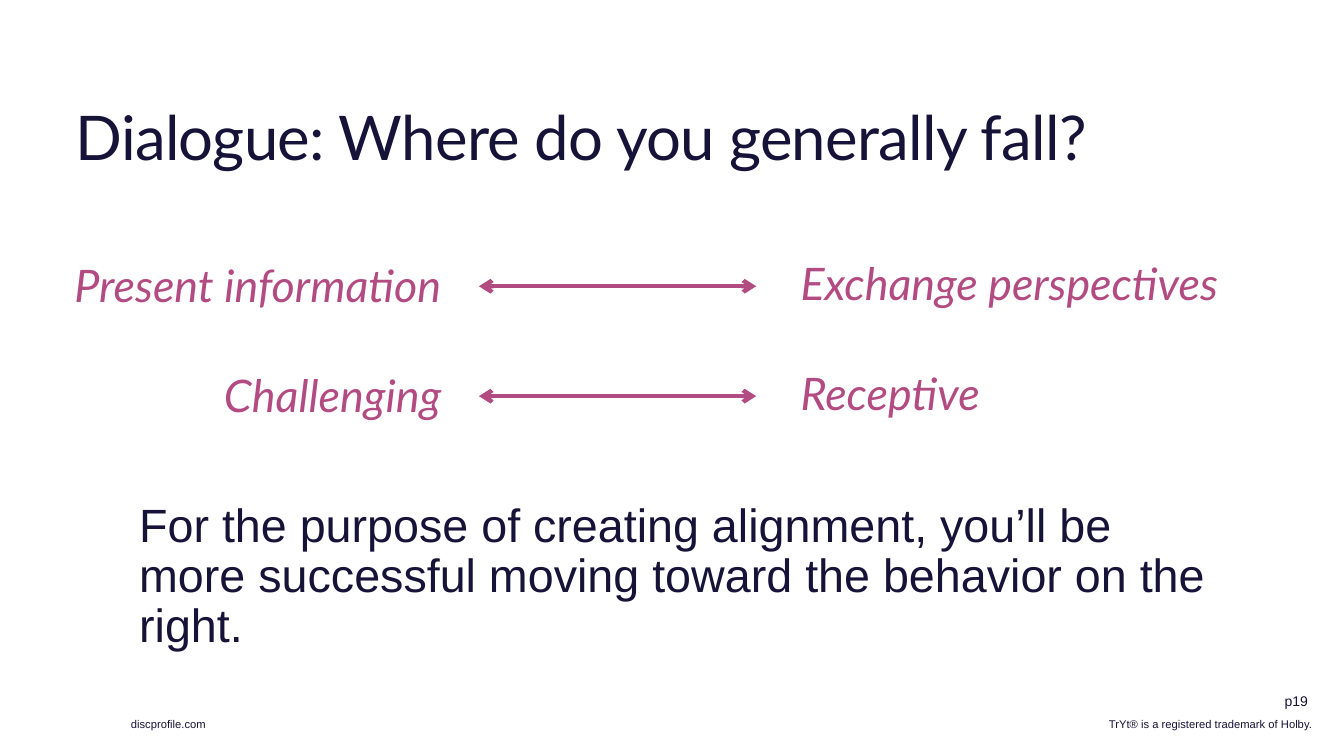
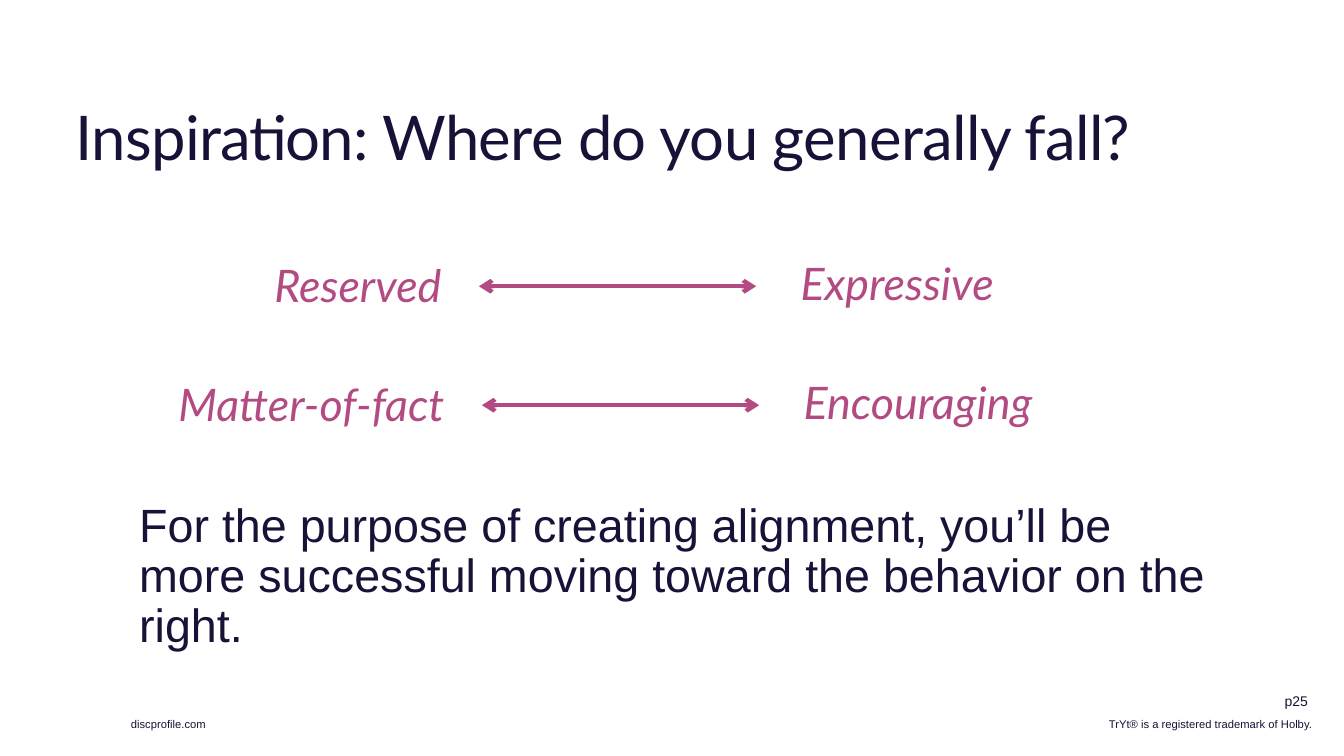
from lxml import etree
from pptx import Presentation
from pptx.dml.color import RGBColor as Rgb
from pptx.enum.shapes import MSO_CONNECTOR as Link
from pptx.enum.text import MSO_ANCHOR as Anchor, PP_ALIGN as Align
from pptx.oxml.ns import qn
from pptx.util import Inches, Pt

COLORS = {"ink": "171238", "rose": "B34B83"}
HEAD, BODY = "Lato", "Arial"
ADVICE = ("For the purpose of creating alignment, you’ll be more successful "
          "moving toward the behavior on the right.")

# title, page, rows of (left, right, top, shift, wide)
SLIDES = [
    ("Dialogue: Where do you generally fall?", "p19", [
        ("Present information", "Exchange perspectives", 2.55, 0, True),
        ("Challenging", "Receptive", 3.64, 0, False)]),
    ("Inspiration: Where do you generally fall?", "p25", [
        ("Reserved", "Expressive", 2.55, 0, False),
        ("Matter-of-fact", "Encouraging", 3.73, 0.03, False)]),
]


class Deck:
    def __init__(self):
        self.prs = Presentation()
        self.prs.slide_width = Inches(13.33)
        self.prs.slide_height = Inches(7.5)
        self.slide = None

    def text(self, words, left, top, width, height, size=32, font=BODY,
             color="ink", italic=False, align=Align.LEFT, anchor=Anchor.TOP,
             inset=0.0, leading=None, after=None, track=None):
        """Add a text box; track is letter spacing in points."""
        box = self.slide.shapes.add_textbox(
            Inches(left), Inches(top), Inches(width), Inches(height))
        frame = box.text_frame
        frame.word_wrap = True
        frame.vertical_anchor = anchor
        frame.margin_left = frame.margin_right = Inches(inset)
        para = frame.paragraphs[0]
        para.alignment = align
        para.line_spacing = leading
        if after is not None:
            para.space_after = Pt(after)
        run = para.add_run()
        run.text = words
        run.font.size = Pt(size)
        run.font.name = font
        run.font.italic = italic
        run.font.color.rgb = Rgb.from_string(COLORS[color])
        if track is not None:
            run.font._element.set("spc", str(round(track * 100)))

    def arrow(self, start, end, y):
        """Add a level line with an arrowhead at both ends."""
        line = self.slide.shapes.add_connector(
            Link.STRAIGHT, Inches(start), Inches(y), Inches(end), Inches(y))
        line.line.color.rgb = Rgb.from_string(COLORS["rose"])
        line.line.width = Pt(3)
        stroke = line.line._get_or_add_ln()
        for tag in ("a:headEnd", "a:tailEnd"):
            etree.SubElement(stroke, qn(tag), type="arrow")
        etree.SubElement(line._element.spPr, qn("a:effectLst"))

    def footer(self, page):
        small = dict(size=8, anchor=Anchor.MIDDLE, inset=0.1)
        self.text("TrYt® is a registered trademark of Holby.",
                  10.9, 7.07, 2.24, 0.23, **small)
        self.text("discprofile.com", 1.2, 7.07, 0.98, 0.23, **small)
        self.text(page, 12.62, 6.82, 0.45, 0.27,
                  **{**small, "size": 10, "align": Align.RIGHT})

    def row(self, left, right, top, shift, wide):
        """Add two opposite traits joined by an arrow."""
        look = dict(font=HEAD, color="rose", italic=True,
                    leading=0.9, after=2)
        near, far = (3.73, 4.74) if wide else (3.03, 3.38)
        self.text(right, 7.94 + shift, top, far, 0.88, **look)
        self.arrow(4.75 + shift, 7.5 + shift, top + 0.29)
        self.text(left, 4.38 + shift - near, top + 0.02, near, 0.88,
                  align=Align.RIGHT, **look)

    def page(self, title, number, rows):
        self.slide = self.prs.slides.add_slide(self.prs.slide_layouts[6])
        self.footer(number)
        self.text(title, 0.65, 0.89, 11.72, 0.88, size=44, font=HEAD,
                  anchor=Anchor.BOTTOM, inset=0.1, leading=0.85, track=-0.5)
        self.text(ADVICE, 1.38, 4.93, 10.78, 1.42, size=33.3,
                  leading=0.9, after=2)
        for row in rows:
            self.row(*row)


def main():
    deck = Deck()
    for item in SLIDES:
        deck.page(*item)
    deck.prs.save("out.pptx")


if __name__ == "__main__":
    main()
